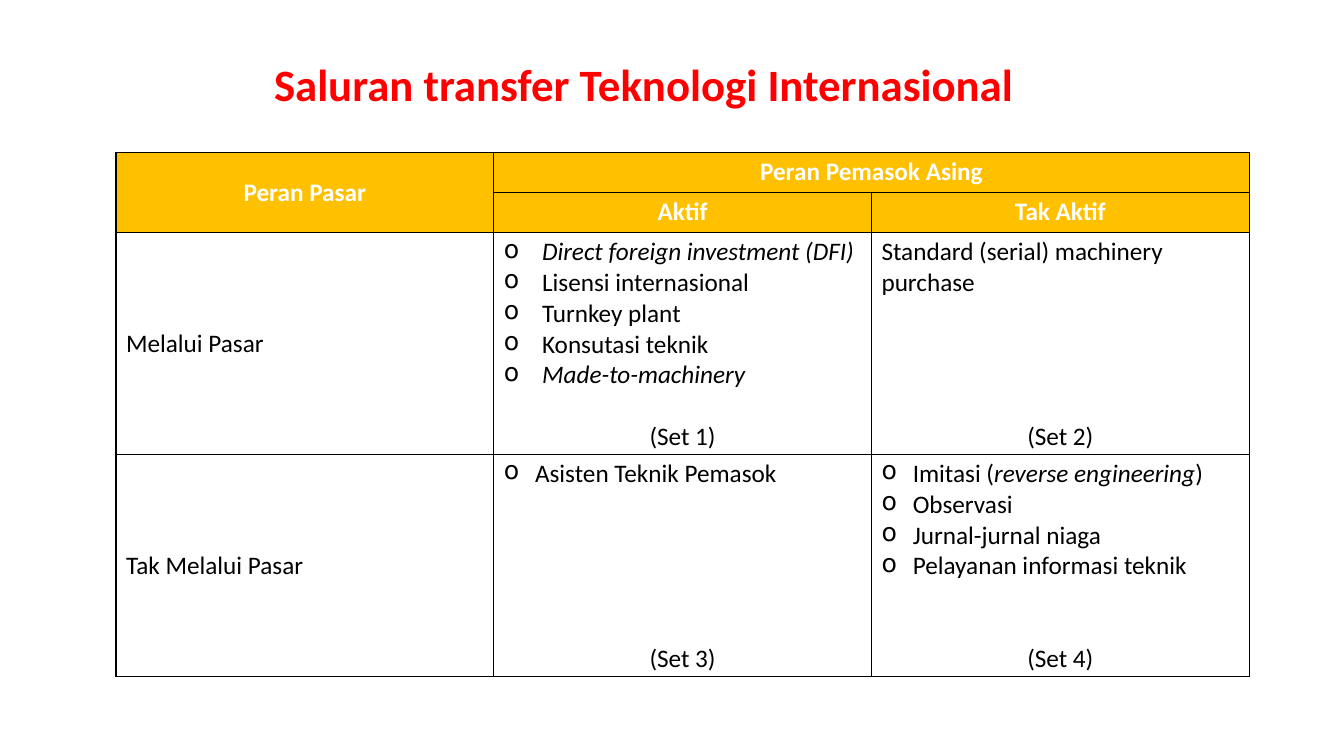
from dataclasses import dataclass

from lxml import etree
from pptx import Presentation
from pptx.dml.color import RGBColor
from pptx.enum.text import MSO_ANCHOR, MSO_AUTO_SIZE, PP_ALIGN
from pptx.oxml.ns import qn
from pptx.util import Inches, Pt

SLIDE_WIDTH, SLIDE_HEIGHT = Inches(13.33), Inches(7.5)
LEFT, CENTER = PP_ALIGN.LEFT, PP_ALIGN.CENTER
TOP, MIDDLE = MSO_ANCHOR.TOP, MSO_ANCHOR.MIDDLE
FIT_TEXT = MSO_AUTO_SIZE.SHAPE_TO_FIT_TEXT

BLACK, WHITE, RED, AMBER = "000000", "FFFFFF", "FF0000", "FFC000"
LINE_POINTS = 22
ROW_PERCENTS = (5.33, 5.33, 29.33, 29.33)
COLUMN_COUNT = 3
CELL_MARGINS = {"margin_top": Inches(0.04), "margin_bottom": Inches(0.03)}
TITLE_FONT = {"name": "Calibri", "size": Pt(32), "bold": True}
HEADER_FONT = {"name": "Calibri", "size": Pt(18), "bold": True}
BODY_FONT = {"name": "Calibri", "size": Pt(18), "bold": False}


@dataclass(frozen=True)
class Run:
    text: str
    italic: bool = False


@dataclass(frozen=True)
class Line:
    runs: tuple[Run, ...]
    align: int = LEFT
    indent: float = 0
    lines_before: int = 0


@dataclass(frozen=True)
class Entry:
    row: int
    column: int
    lines: tuple[Line, ...]
    anchor: int = TOP
    header: bool = False
    row_span: int = 1
    column_span: int = 1


def across(percent: float) -> int:
    return round(SLIDE_WIDTH * percent / 100)


def down(percent: float) -> int:
    return round(SLIDE_HEIGHT * percent / 100)


def color(value: str) -> RGBColor:
    return RGBColor.from_string(value)


def apply(target, values: dict) -> None:
    for attribute, value in values.items():
        setattr(target, attribute, value)


def heading(text: str) -> tuple[Line, ...]:
    return (Line((Run(text),), CENTER),)


def plain(text: str) -> tuple[Line, ...]:
    return (Line((Run(text),)),)


def bullets(indent: float, *items: tuple[Run, ...]) -> tuple[Line, ...]:
    return tuple(Line(runs, indent=indent) for runs in items)


def set_label(number: int, lines_before: int) -> tuple[Line, ...]:
    return (Line((Run(f"(Set {number})"),), CENTER, lines_before=lines_before),)


ENTRIES = (
    Entry(0, 0, heading("Peran Pasar"), MIDDLE, header=True, row_span=2),
    Entry(0, 1, heading("Peran Pemasok Asing"), header=True, column_span=2),
    Entry(1, 1, heading("Aktif"), header=True),
    Entry(1, 2, heading("Tak Aktif"), header=True),
    Entry(2, 0, plain("Melalui Pasar"), MIDDLE),
    Entry(2, 1, bullets(
        0.38,
        (Run("Direct foreign investment (DFI)", True),),
        (Run("Lisensi internasional"),),
        (Run("Turnkey plant"),),
        (Run("Konsutasi teknik"),),
        (Run("Made-to-machinery", True),),
    ) + set_label(1, 1), MIDDLE),
    Entry(2, 2, plain("Standard (serial) machinery purchase") + set_label(2, 4)),
    Entry(3, 0, plain("Tak Melalui Pasar"), MIDDLE),
    Entry(3, 1, bullets(0.31, (Run("Asisten Teknik Pemasok"),)) + set_label(3, 5)),
    Entry(3, 2, bullets(
        0.31,
        (Run("Imitasi ("), Run("reverse engineering", True), Run(")")),
        (Run("Observasi"),),
        (Run("Jurnal-jurnal niaga"),),
        (Run("Pelayanan informasi teknik"),),
    ) + set_label(4, 2)),
)


def write_lines(frame, lines: tuple[Line, ...], font: dict, ink: str) -> None:
    for index, line in enumerate(lines):
        paragraph = frame.add_paragraph() if index else frame.paragraphs[0]
        paragraph.alignment = line.align
        if line.lines_before:
            paragraph.space_before = Pt(LINE_POINTS * line.lines_before)
        if line.indent:
            properties = paragraph._p.get_or_add_pPr()
            properties.set("marL", str(Inches(line.indent)))
            properties.set("indent", str(-Inches(line.indent)))
            etree.SubElement(properties, qn("a:buChar")).set("char", "o")
        for part in line.runs:
            run = paragraph.add_run()
            run.text = part.text
            apply(run.font, font | {"italic": part.italic})
            run.font.color.rgb = color(ink)


def draw_borders(cell) -> None:
    properties = cell._tc.get_or_add_tcPr()
    for side in ("lnL", "lnR", "lnT", "lnB"):
        border = etree.SubElement(properties, qn(f"a:{side}"), w=str(Pt(1)))
        fill = etree.SubElement(border, qn("a:solidFill"))
        etree.SubElement(fill, qn("a:srgbClr")).set("val", BLACK)


def draw_title(slide) -> None:
    title = slide.shapes.add_textbox(across(19.65), down(6.8), across(57.01), down(8.53))
    apply(title.text_frame, {"word_wrap": False, "auto_size": FIT_TEXT})
    write_lines(title.text_frame, plain("Saluran transfer Teknologi Internasional"), TITLE_FONT, RED)


def draw_channels(slide) -> None:
    table = slide.shapes.add_table(
        len(ROW_PERCENTS), COLUMN_COUNT,
        across(8.63), down(20.13), across(84.32), down(sum(ROW_PERCENTS)),
    ).table
    apply(table, {"first_row": False, "horz_banding": False})
    for row, percent in zip(table.rows, ROW_PERCENTS):
        row.height = down(percent)
    for cell in table.iter_cells():
        draw_borders(cell)
        cell.fill.background()
        apply(cell, CELL_MARGINS)
    for entry in ENTRIES:
        cell = table.cell(entry.row, entry.column)
        if entry.row_span * entry.column_span > 1:
            cell.merge(table.cell(entry.row + entry.row_span - 1, entry.column + entry.column_span - 1))
        cell.vertical_anchor = entry.anchor
        if entry.header:
            cell.fill.solid()
            cell.fill.fore_color.rgb = color(AMBER)
        font, ink = (HEADER_FONT, WHITE) if entry.header else (BODY_FONT, BLACK)
        write_lines(cell.text_frame, entry.lines, font, ink)


def main() -> None:
    presentation = Presentation()
    apply(presentation, {"slide_width": SLIDE_WIDTH, "slide_height": SLIDE_HEIGHT})
    slide = presentation.slides.add_slide(presentation.slide_layouts[6])
    draw_title(slide)
    draw_channels(slide)
    presentation.save("out.pptx")


if __name__ == "__main__":
    main()
